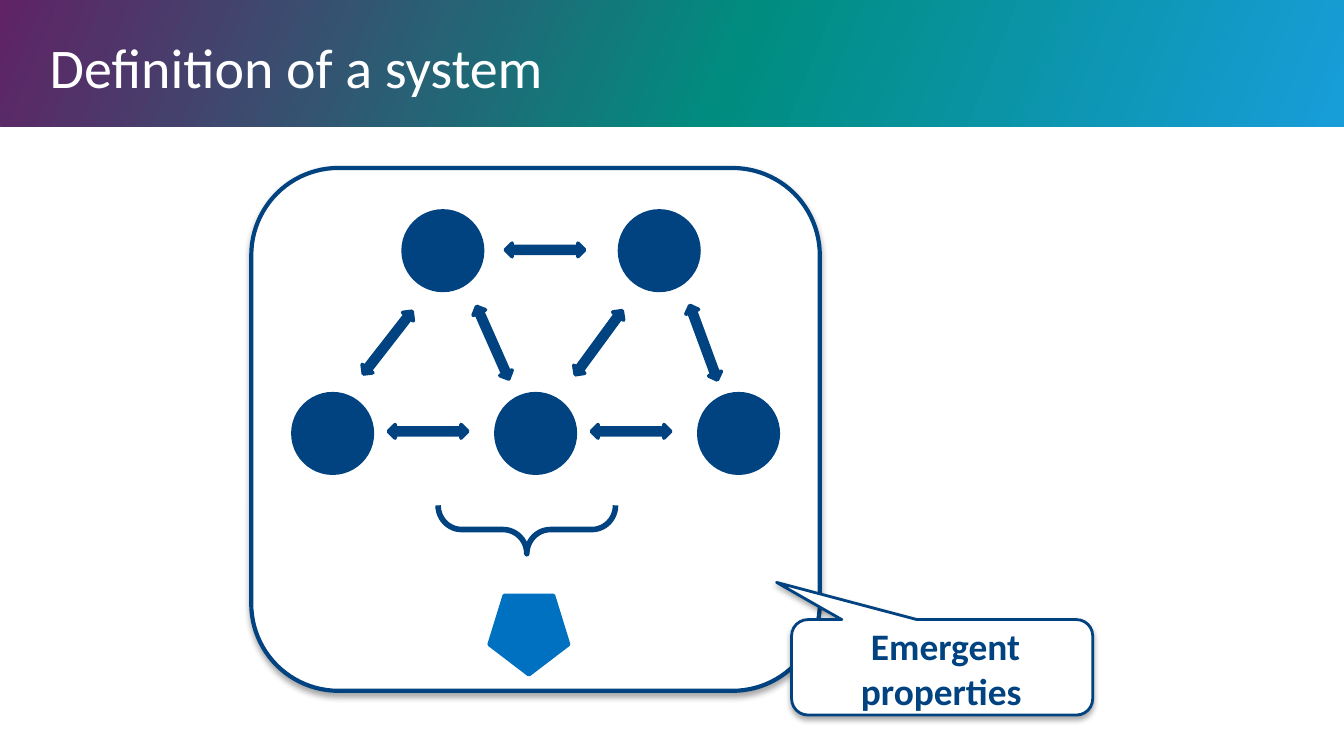
from copy import deepcopy

from lxml.etree import SubElement
from pptx import Presentation
from pptx.dml.color import RGBColor
from pptx.enum.shapes import MSO_SHAPE as SHAPE
from pptx.enum.text import MSO_ANCHOR as ANCHOR, PP_ALIGN as ALIGN
from pptx.oxml.ns import qn
from pptx.util import Inches, Pt

NAVY, BLUE, WHITE = "014380", "0070C0", "FFFFFF"


def color(value):
    return RGBColor.from_string(value)


def add_figure(kind, left, top, width, height, fill, line, weight, turn=0, shadow=False):
    figure = page.shapes.add_shape(kind, Inches(left), Inches(top), Inches(width), Inches(height))
    figure.rotation = turn
    figure.shadow.inherit = False
    figure.fill.solid()
    figure.fill.fore_color.rgb = color(fill)
    figure.line.color.rgb = color(line)
    figure.line.width = Pt(weight)
    if shadow:
        effects = figure._element.spPr.find(qn("a:effectLst"))
        outer = SubElement(effects, qn("a:outerShdw"), blurRad=str(Pt(3.1)),
                           dist=str(Pt(1.8)), dir="5400000", rotWithShape="0")
        tone = SubElement(outer, qn("a:srgbClr"), val="000000")
        SubElement(tone, qn("a:alpha"), val="35000")
    return figure


deck = Presentation()
deck.slide_width = Inches(10)
deck.slide_height = Inches(10 * 9 / 16)
page = deck.slides.add_slide(deck.slide_layouts[6])

banner = page.shapes.add_shape(SHAPE.RECTANGLE, 0, 0, Inches(10), Inches(0.94))
banner.shadow.inherit = False
banner.line.fill.background()
banner.fill.gradient()
banner.fill.gradient_angle = 338
stop_list = banner._element.spPr.find(qn("a:gradFill")).find(qn("a:gsLst"))
stop_list.append(deepcopy(stop_list[0]))
stops = [(0, "602365"), (0.55, "008D80"), (1, "189DD9")]
for stop, (position, shade) in zip(banner.fill.gradient_stops, stops):
    stop.position = position
    stop.color.rgb = color(shade)

add_figure(SHAPE.ROUNDED_RECTANGLE, 1.87, 1.25, 4.23, 3.89, WHITE, NAVY, 2.25, shadow=True)

size = 0.59
for left, top in [(3, 1.57), (4.61, 1.57), (2.18, 2.93), (3.69, 2.93), (5.2, 2.93)]:
    add_figure(SHAPE.OVAL, left, top, size, size, NAVY, NAVY, 2)

arrows = [
    (3.76, 1.81, 0), (2.89, 3.16, 0), (4.4, 3.16, 0),
    (2.59, 2.5, 307.9), (3.37, 2.5, 66.1), (4.16, 2.5, 306.2), (4.94, 2.5, 69.8),
]
for left, top, turn in arrows:
    add_figure(SHAPE.LEFT_RIGHT_ARROW, left, top, size, 0.1, NAVY, NAVY, 2, turn)

add_figure(SHAPE.REGULAR_PENTAGON, 3.64, 4.43, size, size, BLUE, BLUE, 2, 180)

brace = add_figure(SHAPE.LEFT_BRACE, 3.74, 3.28, 0.36, 1.32, WHITE, NAVY, 3, 270)
brace.adjustments[0] = 0.49
brace.adjustments[1] = 0.5

callout = add_figure(SHAPE.ROUNDED_RECTANGULAR_CALLOUT, 5.89, 4.61, 2.24, 0.71,
                     WHITE, NAVY, 1.5, 180, shadow=True)
for index, value in enumerate([0.55, 0.89, 0.17]):
    callout.adjustments[index] = value

labels = [
    ("Definition of a system", 0.37, 0.29, 9.28, 0.41, 30, WHITE, False, ALIGN.LEFT, ANCHOR.MIDDLE, 0, 0),
    ("Emergent properties ", 5.99, 4.59, 2.09, 0.77, 20, NAVY, True, ALIGN.CENTER, ANCHOR.TOP, 0.1, 0.05),
]
for text, left, top, width, height, points, shade, bold, align, anchor, side, edge in labels:
    box = page.shapes.add_textbox(Inches(left), Inches(top), Inches(width), Inches(height))
    frame = box.text_frame
    frame.word_wrap = True
    frame.vertical_anchor = anchor
    frame.margin_left = frame.margin_right = Inches(side)
    frame.margin_top = frame.margin_bottom = Inches(edge)
    para = frame.paragraphs[0]
    para.alignment = align
    span = para.add_run()
    span.text = text
    span.font.name = "Calibri"
    span.font.size = Pt(points)
    span.font.bold = bold
    span.font.color.rgb = color(shade)

deck.save("out.pptx")
